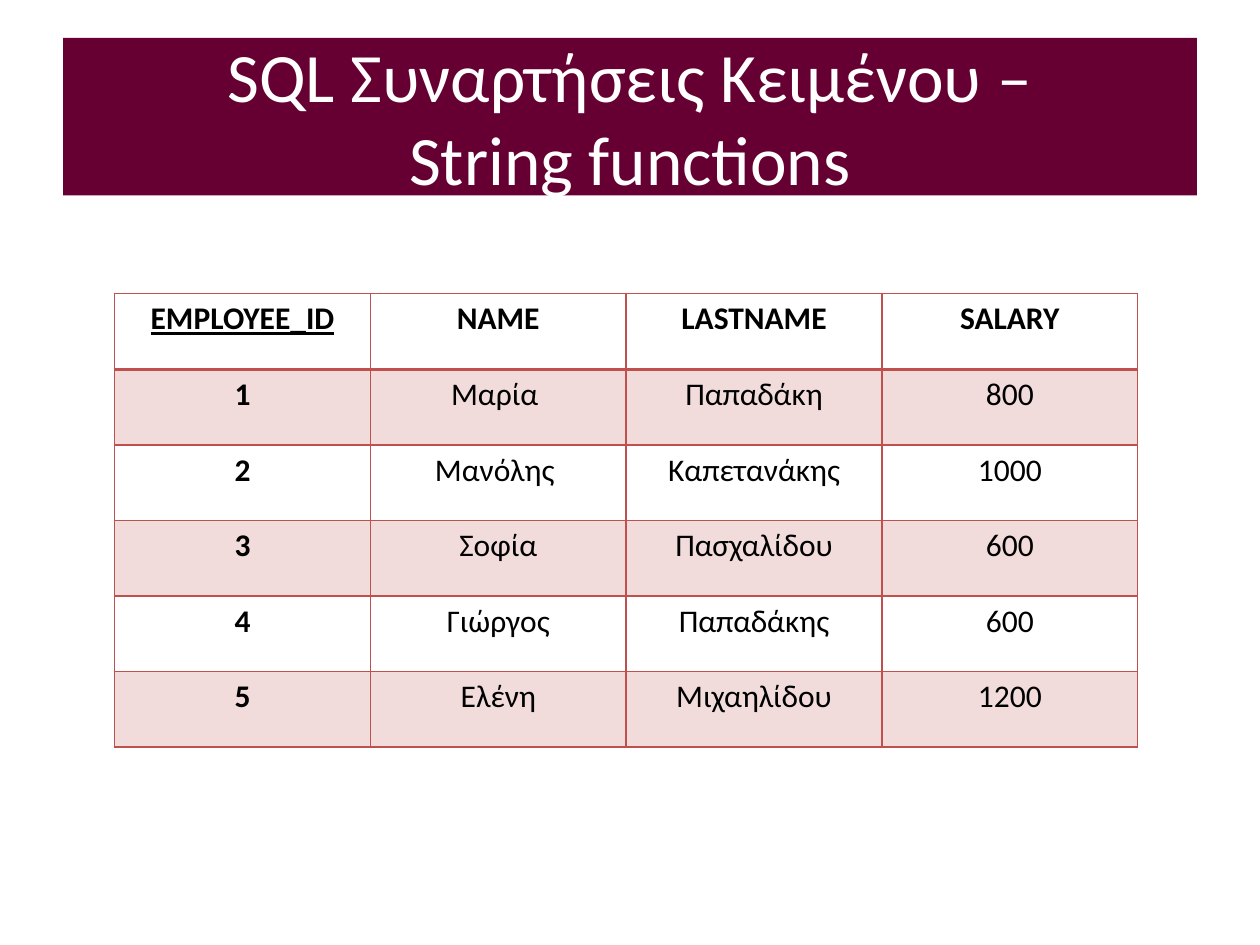
from dataclasses import dataclass

from lxml import etree
from pptx import Presentation
from pptx import util as u
from pptx.dml.color import RGBColor
from pptx.enum import text
from pptx.oxml import ns


@dataclass(frozen=True)
class Theme:
    font: str = "Calibri"
    banner: str = "660033"
    accent: str = "C0504D"
    light: str = "FFFFFF"
    dark: str = "000000"
    band_alpha: int = 20
    title_size: float = 39.6
    cell_size: float = 18
    thin: float = 1
    thick: float = 2


THEME = Theme()
WIDTH, HEIGHT = u.Inches(10), u.Inches(7.5)
TITLE = "SQL Συναρτήσεις Κειμένου –\vString functions"
EMPLOYEES = [
    ("EMPLOYEE_ID", "NAME", "LASTNAME", "SALARY"),
    ("1", "Μαρία ", "Παπαδάκη", "800"),
    ("2", "Μανόλης ", "Καπετανάκης", "1000"),
    ("3", "Σοφία", "Πασχαλίδου", "600"),
    ("4", "Γιώργος", "Παπαδάκης", "600"),
    ("5", "Ελένη", "Μιχαηλίδου", "1200"),
]


def write(frame, words, size, color, bold=False, underline=False):
    """Put centred, formatted words into a text frame."""
    frame.text = words
    para = frame.paragraphs[0]
    para.alignment = text.PP_ALIGN.CENTER
    for span in para.runs:
        span.font.name = THEME.font
        span.font.size = u.Pt(size)
        span.font.bold = bold
        span.font.underline = underline
        span.font.color.rgb = RGBColor.from_string(color)


def add_title(page):
    box = page.shapes.title
    box.left, box.top = int(WIDTH * 0.05), int(HEIGHT * 0.04)
    box.width, box.height = int(WIDTH * 0.9), u.Inches(1.25)
    box.fill.solid()
    box.fill.fore_color.rgb = RGBColor.from_string(THEME.banner)
    write(box.text_frame, TITLE, THEME.title_size, THEME.light)
    box.text_frame.auto_size = text.MSO_AUTO_SIZE.NONE
    box.text_frame.vertical_anchor = text.MSO_ANCHOR.MIDDLE


def set_borders(cell, widths):
    """Draw accent borders; widths maps a side (L, R, T, B) to points."""
    properties = cell._tc.get_or_add_tcPr()
    for side, width in widths.items():
        line = etree.SubElement(properties, ns.qn(f"a:ln{side}"), w=str(u.Pt(width)))
        fill = etree.SubElement(line, ns.qn("a:solidFill"))
        etree.SubElement(fill, ns.qn("a:srgbClr"), val=THEME.accent)


def set_band(cell, shaded):
    """Shade a cell with the see-through accent, or leave it clear."""
    if not shaded:
        cell.fill.background()
        return
    cell.fill.solid()
    cell.fill.fore_color.rgb = RGBColor.from_string(THEME.accent)
    color = cell._tc.tcPr.find(f"{ns.qn('a:solidFill')}/{ns.qn('a:srgbClr')}")
    etree.SubElement(color, ns.qn("a:alpha"), val=str(THEME.band_alpha * 1000))


def add_employee_table(page, rows):
    column_width, row_height = u.Inches(2.03), u.Inches(0.6)
    table = page.shapes.add_table(
        len(rows), len(rows[0]), u.Inches(0.91), u.Inches(2.33),
        column_width * len(rows[0]), row_height * len(rows)).table
    table.first_row = table.horz_banding = False
    for r, row in enumerate(rows):
        for c, words in enumerate(row):
            cell = table.cell(r, c)
            # The rule under the header is heavier than the rest
            set_borders(cell, {
                "L": THEME.thin, "R": THEME.thin,
                "T": THEME.thick if r == 1 else THEME.thin,
                "B": THEME.thick if r == 0 else THEME.thin})
            set_band(cell, shaded=r % 2 == 1)
            write(cell.text_frame, words, THEME.cell_size, THEME.dark,
                  bold=r == 0 or c == 0, underline=r == 0 and c == 0)


def main():
    deck = Presentation()
    deck.slide_width, deck.slide_height = WIDTH, HEIGHT
    page = deck.slides.add_slide(deck.slide_layouts.get_by_name("Title Only"))
    add_title(page)
    add_employee_table(page, EMPLOYEES)
    deck.save("out.pptx")


if __name__ == "__main__":
    main()
